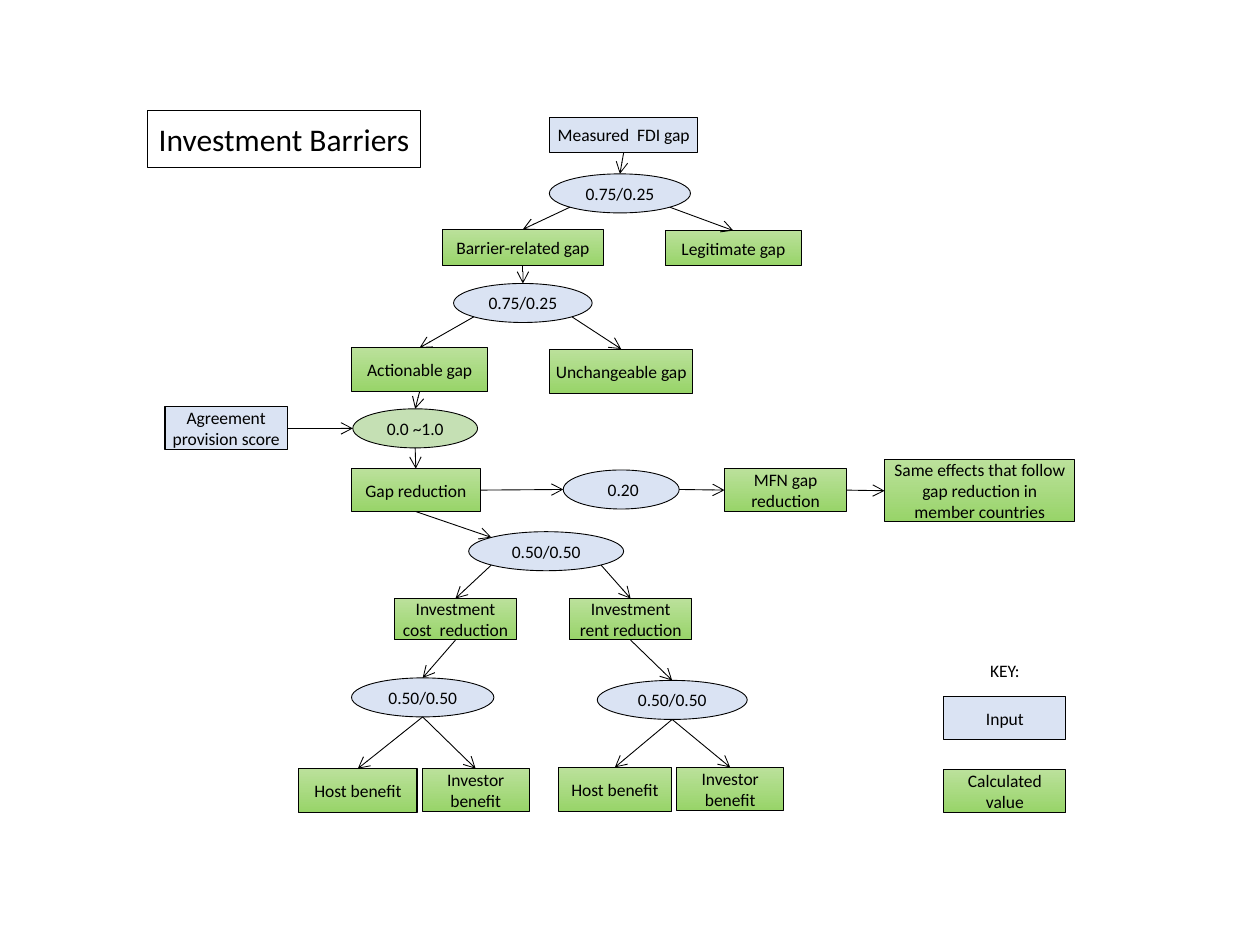
import lxml.etree
import pptx
import pptx.dml.color
import pptx.enum.shapes
import pptx.enum.text
import pptx.oxml.ns
import pptx.util

COLS, ROWS = 100, 75
UNIT = pptx.util.Inches(10) // COLS
RECT = pptx.enum.shapes.MSO_SHAPE.RECTANGLE
OVAL = pptx.enum.shapes.MSO_SHAPE.OVAL
BLACK, BLUE, SAGE = "000000", "DAE3F3", "C5E0B4"
GREEN = ("BBE19B", "98D469")

# Share of width and height at which a connector meets a shape
PORTS = {"top": (0.5, 0), "left": (0, 0.5), "bottom": (0.5, 1), "right": (1, 0.5),
         "nw": (0.146, 0.146), "sw": (0.146, 0.854), "se": (0.854, 0.854)}
SITES = {"top": 0, "left": 1, "bottom": 2, "right": 3}


def color(code):
    return pptx.dml.color.RGBColor.from_string(code)


def paint(fill, tone):
    """Fill with nothing, one colour, or a top-to-bottom pair."""
    if tone is None:
        fill.background()
    elif isinstance(tone, tuple):
        fill.gradient()
        fill.gradient_angle = 270
        for stop, code in zip(fill.gradient_stops, tone):
            stop.color.rgb = color(code)
    else:
        fill.solid()
        fill.fore_color.rgb = color(tone)


def node(slide, box, place, text, tone=GREEN, form=RECT, size=10, edge=True):
    """Add a labelled shape; place is in grid units from the box's corner."""
    x, y, w, h = place
    spot = (box[0] + x, box[1] + y, w, h)
    shape = slide.shapes.add_shape(form, *(round(n * UNIT) for n in spot))
    shape.shadow.inherit = False
    paint(shape.fill, tone)
    if edge:
        shape.line.color.rgb = color(BLACK)
        shape.line.width = pptx.util.Pt(0.6 if form == RECT else 0.5)
    else:
        shape.line.fill.background()
    frame = shape.text_frame
    frame.word_wrap = True
    frame.vertical_anchor = pptx.enum.text.MSO_ANCHOR.MIDDLE
    if form == RECT:
        frame.margin_left = frame.margin_right = pptx.util.Inches(0.04)
        frame.margin_top = frame.margin_bottom = pptx.util.Inches(0.02)
    frame.text = text
    for para in frame.paragraphs:
        para.alignment = pptx.enum.text.PP_ALIGN.CENTER
        para.font.name = "Calibri"
        para.font.size = pptx.util.Pt(size)
        para.font.color.rgb = color(BLACK)
    return shape


def oval(slide, box, place, text, tone=BLUE):
    return node(slide, box, place, text, tone, OVAL)


def port(shape, side):
    across, down = PORTS[side]
    return (round(shape.left + across * shape.width),
            round(shape.top + down * shape.height))


def link(slide, start, out, end, into="top"):
    """Draw an arrow between two ports, joined where the port is a shared site."""
    line = slide.shapes.add_connector(
        pptx.enum.shapes.MSO_CONNECTOR.STRAIGHT, *port(start, out), *port(end, into))
    if start.auto_shape_type == RECT:
        line.begin_connect(start, SITES[out])
    if end.auto_shape_type == RECT or into == "top":
        line.end_connect(end, SITES[into])
    line.line.color.rgb = color(BLACK)
    line.line.width = pptx.util.Pt(0.5)
    tag = pptx.oxml.ns.qn
    lxml.etree.SubElement(line.line._get_or_add_ln(), tag("a:tailEnd"), type="arrow")
    lxml.etree.SubElement(line._element.spPr, tag("a:effectLst"))


def fork(slide, root, left, right):
    link(slide, root, "sw", left)
    link(slide, root, "se", right)


def gaps(slide, box):
    """Break the measured gap down; return the actionable part."""
    total = node(slide, box, (15.7, 0, 11.8, 2.8), "Measured  FDI gap", BLUE)
    first = oval(slide, box, (15.7, 4.5, 11.2, 3.1), "0.75/0.25")
    barrier = node(slide, box, (7.2, 8.9, 12.8, 2.9), "Barrier-related gap")
    legit = node(slide, box, (24.9, 9, 10.8, 2.8), "Legitimate gap")
    second = oval(slide, box, (8.1, 13.2, 11, 3.1), "0.75/0.25")
    action = node(slide, box, (0, 18.3, 10.8, 3.5), "Actionable gap")
    fixed = node(slide, box, (15.7, 18.4, 11.4, 3.5), "Unchangeable gap")
    link(slide, total, "bottom", first)
    fork(slide, first, barrier, legit)
    link(slide, barrier, "bottom", second)
    fork(slide, second, action, fixed)
    return action


def chain(slide, box, action):
    """Lead from the provision score to member effects; return the gap reduction."""
    score = node(slide, box, (0, 0, 9.7, 3.4), "Agreement provision score", BLUE)
    factor = oval(slide, box, (14.9, 0.15, 9.9, 3.1), "0.0 ~1.0", SAGE)
    cut = node(slide, box, (14.8, 4.9, 10.2, 3.4), "Gap reduction")
    share = oval(slide, box, (31.6, 5, 9.2, 3.1), " 0.20")
    spread = node(slide, box, (44.4, 4.9, 9.7, 3.4), "MFN gap reduction")
    effect = node(slide, box, (57.1, 4.2, 15.1, 4.9),
                  "Same effects that follow gap reduction in\nmember countries")
    link(slide, action, "bottom", factor)
    link(slide, score, "right", factor, "left")
    link(slide, factor, "bottom", cut)
    for start, end in ((cut, share), (share, spread), (spread, effect)):
        link(slide, start, "right", end, "left")
    return cut


def split(slide, box, cut):
    """Divide the gap reduction; return its cost and rent parts."""
    half = oval(slide, box, (9.3, 0, 12.3, 3.1), "0.50/0.50")
    cost = node(slide, box, (3.4, 5.3, 9.7, 3.3), "Investment\ncost  reduction")
    rent = node(slide, box, (17.3, 5.3, 9.7, 3.3), "Investment rent reduction")
    link(slide, cut, "bottom", half, "nw")
    fork(slide, half, cost, rent)
    return cost, rent


def gains(slide, box, source, inset, width):
    """Share one reduction between host and investor."""
    across, row = box[2], box[3] - 3.5
    half = oval(slide, box, (inset, 0, width, 3.1), "0.50/0.50")
    host = node(slide, box, (0, row, across - 8.9, 3.5), "Host benefit")
    owner = node(slide, box, (across - 8.5, row, 8.5, 3.4), "Investor benefit")
    link(slide, source, "bottom", half)
    for end in (host, owner):
        link(slide, half, "bottom", end)


def key(slide, box):
    wide, tall = box[2], 3.4
    node(slide, box, (0, 0, wide, tall), "KEY:", None, edge=False)
    node(slide, box, (0, 3.8, wide, tall), "Input", BLUE)
    node(slide, box, (0, 9.6, wide, tall), "Calculated value")


def main():
    deck = pptx.Presentation()
    deck.slide_width, deck.slide_height = COLS * UNIT, ROWS * UNIT
    slide = deck.slides.add_slide(deck.slide_layouts[6])
    node(slide, (11.7, 8.8), (0, 0, 21.7, 4.5), "Investment Barriers", None, size=18)
    action = gaps(slide, (27.9, 9.3, 35.7, 21.9))
    cut = chain(slide, (13.1, 32.3, 72.2, 9.1), action)
    cost, rent = split(slide, (27.9, 42.2, 27, 8.6), cut)
    gains(slide, (23.7, 53.8, 18.3, 10.7), cost, 4.2, 11.3)
    gains(slide, (44.3, 54, 17.9, 10.4), rent, 3.1, 11.9)
    key(slide, (74.9, 51.5, 9.7, 13))
    deck.save("out.pptx")


if __name__ == "__main__":
    main()
